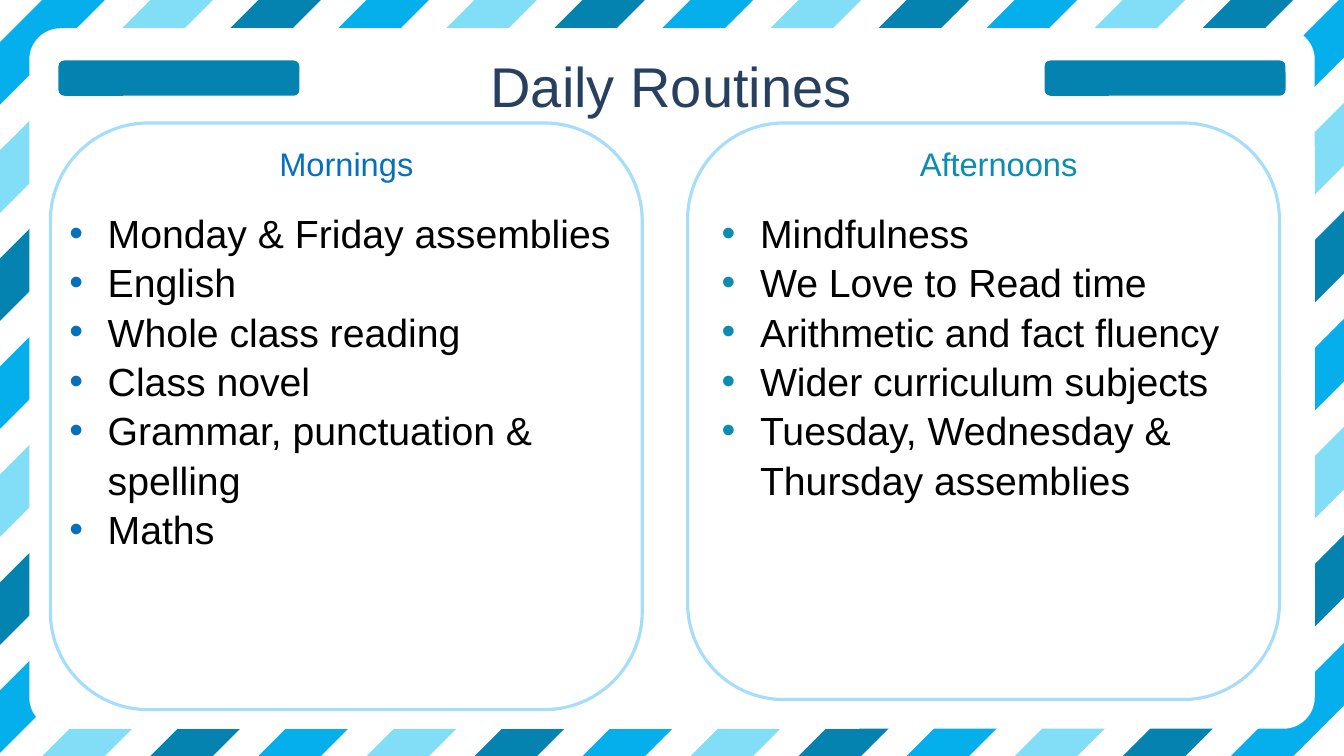
import dataclasses
import pptx
import pptx.util
import pptx.dml.color
import pptx.enum.shapes
import pptx.enum.text
import pptx.oxml

Inches = pptx.util.Inches
Pt = pptx.util.Pt
RGB = pptx.dml.color.RGBColor.from_string
ALIGN = pptx.enum.text.PP_ALIGN
ANCHOR = pptx.enum.text.MSO_ANCHOR
FIT = pptx.enum.text.MSO_AUTO_SIZE
ROUND = pptx.enum.shapes.MSO_SHAPE.ROUNDED_RECTANGLE
WIDE, HIGH = 13.33, 7.5


@dataclasses.dataclass(frozen=True)
class Theme:
    font: str = "Arial"
    stripes: tuple = ("05AFEB", "82DDF7", "0483B0")
    paper: str = "FFFFFF"
    edge: str = "A5DDFA"
    bar: str = "0483B0"
    title: str = "274060"
    body: str = "000000"
    morn: str = "0670BA"
    noon: str = "0B8CB1"
    title_size: float = 40
    head_size: float = 23.3
    body_size: float = 28
    edge_width: float = 2.25
    leading: float = 1.05


THEME = Theme()


def paint(shape, fill, line=None):
    shape.shadow.inherit = False
    shape.fill.solid()
    shape.fill.fore_color.rgb = RGB(fill)
    if line:
        shape.line.color.rgb = RGB(line)
        shape.line.width = Pt(THEME.edge_width)
    else:
        shape.line.fill.background()


def panel(slide, box, radius, fill, line=None):
    shape = slide.shapes.add_shape(ROUND, *map(Inches, box))
    shape.adjustments[0] = radius
    paint(shape, fill, line)


def bullet(par, color):
    props = par._p.get_or_add_pPr()
    props.set("marL", str(Inches(0.38)))
    props.set("indent", str(-Inches(0.38)))
    space = 'xmlns:a="http://schemas.openxmlformats.org/drawingml/2006/main"'
    for part in (f'<a:buClr {space}><a:srgbClr val="{color}"/></a:buClr>',
                 f'<a:buFont {space} typeface="Arial"/>',
                 f'<a:buChar {space} char="•"/>'):
        props.append(pptx.oxml.parse_xml(part))


def words(slide, box, lines, size, color, dot=None, middle=False):
    frame = slide.shapes.add_textbox(*map(Inches, box)).text_frame
    form = {
        "word_wrap": True,
        "auto_size": FIT.NONE if middle else FIT.SHAPE_TO_FIT_TEXT,
        "vertical_anchor": ANCHOR.MIDDLE if middle else ANCHOR.TOP,
    }
    for side in ("left", "top", "right", "bottom"):
        form["margin_" + side] = Inches(0.1)
    for key, value in form.items():
        setattr(frame, key, value)
    for spot, line in enumerate(lines):
        par = frame.add_paragraph() if spot else frame.paragraphs[0]
        par.text = line
        par.line_spacing = THEME.leading
        par.alignment = ALIGN.LEFT if dot else ALIGN.CENTER
        if dot:
            bullet(par, dot)
        for key, value in {"name": THEME.font, "size": Pt(size)}.items():
            setattr(par.font, key, value)
        par.font.color.rgb = RGB(color)


def band(start, box, thick):
    """Corners of a diagonal band, cut to the box."""
    left, top, wide, high = box
    end = start + thick

    def upper(total):
        return min(total, wide), max(total - wide, 0)

    def lower(total):
        return max(total - high, 0), min(total, high)

    turn = [(wide, 0)] if start < wide < end else []
    points = [upper(start), *turn, upper(end), lower(end), lower(start)]
    return [(Inches(left + x), Inches(top + y)) for x, y in points]


def border(slide, box):
    # Bands take the three colours in turn
    first, step, thick, count = 0.42, 1.0716, 0.62, 19
    cycle = len(THEME.stripes)
    for turn, color in enumerate(THEME.stripes):
        bands = [band(first + step * spot, box, thick)
                 for spot in range(turn, count, cycle)]
        maker = slide.shapes.build_freeform(*bands[0][0], scale=1.0)
        for points in bands:
            maker.move_to(*points[0])
            maker.add_line_segments(points[1:], close=True)
        paint(maker.convert_to_shape(), color)
    # White sheet inside the stripes
    left, top, wide, high = box
    panel(slide, (left + 0.29, top + 0.28, wide - 0.58, high - 0.55),
          0.045, THEME.paper)


def header(slide, box, text):
    left, top, wide, high = box
    words(slide, box, [text], THEME.title_size, THEME.title, middle=True)
    # Bars on both sides of the title
    for start in (left - 0.16, left + wide - 2.21):
        panel(slide, (start, top + 0.24, 2.39, 0.35), 0.167, THEME.bar)


def column(slide, box, shift, text, items, color):
    left, top, wide, high = box
    panel(slide, box, 0.167, THEME.paper, THEME.edge)
    # Heading and list
    words(slide, (left + shift + 1.16, top + 0.09, 3.37, 0.59), [text],
          THEME.head_size, color)
    words(slide, (left + shift, top + 0.73, 5.68, 3.42), items,
          THEME.body_size, THEME.body, dot=color)


def main():
    deck = pptx.Presentation()
    deck.slide_width, deck.slide_height = Inches(WIDE), Inches(HIGH)
    slide = deck.slides.add_slide(deck.slide_layouts[6])
    border(slide, (0, 0, WIDE, HIGH))
    column(slide, (0.5, 1.22, 5.87, 5.82), 0.09, "Mornings", [
        "Monday & Friday assemblies",
        "English",
        "Whole class reading",
        "Class novel",
        "Grammar, punctuation & spelling",
        "Maths",
    ], THEME.morn)
    column(slide, (6.82, 1.22, 5.87, 5.72), 0.24, "Afternoons", [
        "Mindfulness",
        "We Love to Read time",
        "Arithmetic and fact fluency",
        "Wider curriculum subjects",
        "Tuesday, Wednesday & Thursday assemblies",
    ], THEME.noon)
    header(slide, (0.74, 0.36, 11.83, 0.94), "Daily Routines")
    deck.save("out.pptx")


if __name__ == "__main__":
    main()
